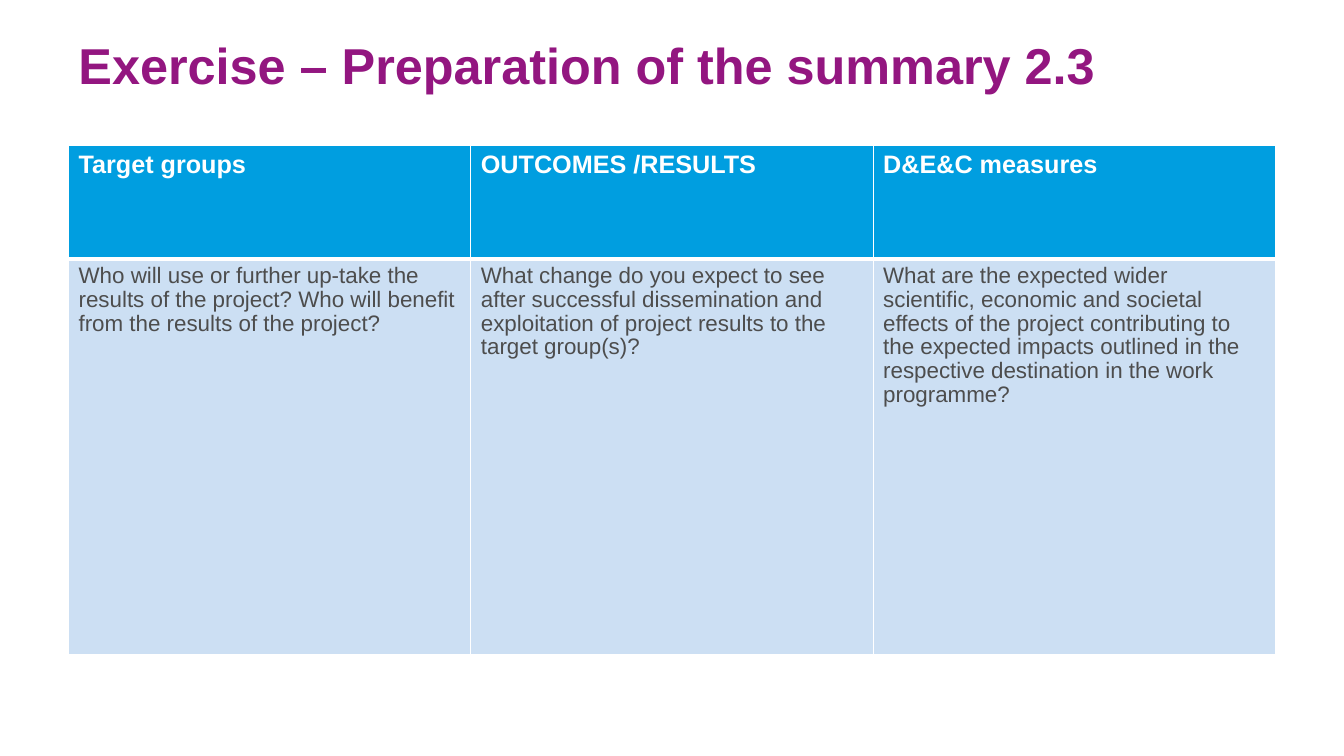
import pptx
import pptx.dml.color
import pptx.enum.text
import pptx.oxml
import pptx.oxml.ns
import pptx.util

Inches = pptx.util.Inches

THEME = {
    "font": "Arial",
    "title": "931680",
    "header_fill": "009EE0",
    "body_fill": "CCDFF3",
    "body_text": "4D4D4D",
    "white": "FFFFFF",
    "title_size": 36,
    "header_size": 18,
    "body_size": 16,
}


def write_text(tf, text, size, color, bold=False, spacing=None):
    tf.word_wrap = True
    p = tf.paragraphs[0]
    p.line_spacing = spacing
    r = p.add_run()
    r.text = text
    r.font.name = THEME["font"]
    r.font.size = pptx.util.Pt(size)
    r.font.bold = bold
    r.font.color.rgb = pptx.dml.color.RGBColor.from_string(color)


def set_borders(cell, **widths):
    for side in ("L", "R", "T", "B"):
        width = pptx.util.Pt(widths.get(side, 1))
        cell._tc.get_or_add_tcPr().append(pptx.oxml.parse_xml(
            f'<a:ln{side} {pptx.oxml.ns.nsdecls("a")} w="{width}"><a:solidFill>'
            f'<a:srgbClr val="{THEME["white"]}"/></a:solidFill></a:ln{side}>'))


prs = pptx.Presentation()
prs.slide_width, prs.slide_height = Inches(13.33), Inches(7.5)
slide = prs.slides.add_slide(prs.slide_layouts[6])
left, width = Inches(0.68), Inches(11.97)

# Title
sp = slide.shapes.add_textbox(left, Inches(0.29), width, Inches(1.02))
tf = sp.text_frame
tf.margin_bottom = 0
tf.vertical_anchor = pptx.enum.text.MSO_ANCHOR.TOP
write_text(tf, "Exercise – Preparation of the summary 2.3",
           THEME["title_size"], THEME["title"], bold=True)

# Table: one heading and one guiding question per column
columns = [
    ("Target groups",
     "Who will use or further up-take the results of the project? "
     "Who will benefit from the results of the project?"),
    ("OUTCOMES /RESULTS",
     "What change do you expect to see after successful dissemination and "
     "exploitation of project results to the target group(s)?"),
    ("D&E&C measures",
     "What are the expected wider scientific, economic and societal effects of "
     "the project contributing to the expected impacts outlined in the "
     "respective destination in the work programme?"),
]
table = slide.shapes.add_table(2, len(columns), left, Inches(1.44),
                               width, Inches(5.05)).table
table.rows[0].height, table.rows[1].height = Inches(1.13), Inches(3.92)

row_styles = [
    (THEME["header_fill"], {"B": 3},
     dict(size=THEME["header_size"], color=THEME["white"], bold=True)),
    (THEME["body_fill"], {"T": 3},
     dict(size=THEME["body_size"], color=THEME["body_text"], spacing=0.96)),
]
for col, texts in enumerate(columns):
    table.columns[col].width = Inches(3.99)
    for row, (fill, borders, text_format) in enumerate(row_styles):
        cell = table.cell(row, col)
        set_borders(cell, **borders)
        cell.fill.solid()
        cell.fill.fore_color.rgb = pptx.dml.color.RGBColor.from_string(fill)
        write_text(cell.text_frame, texts[row], **text_format)

prs.save("out.pptx")
